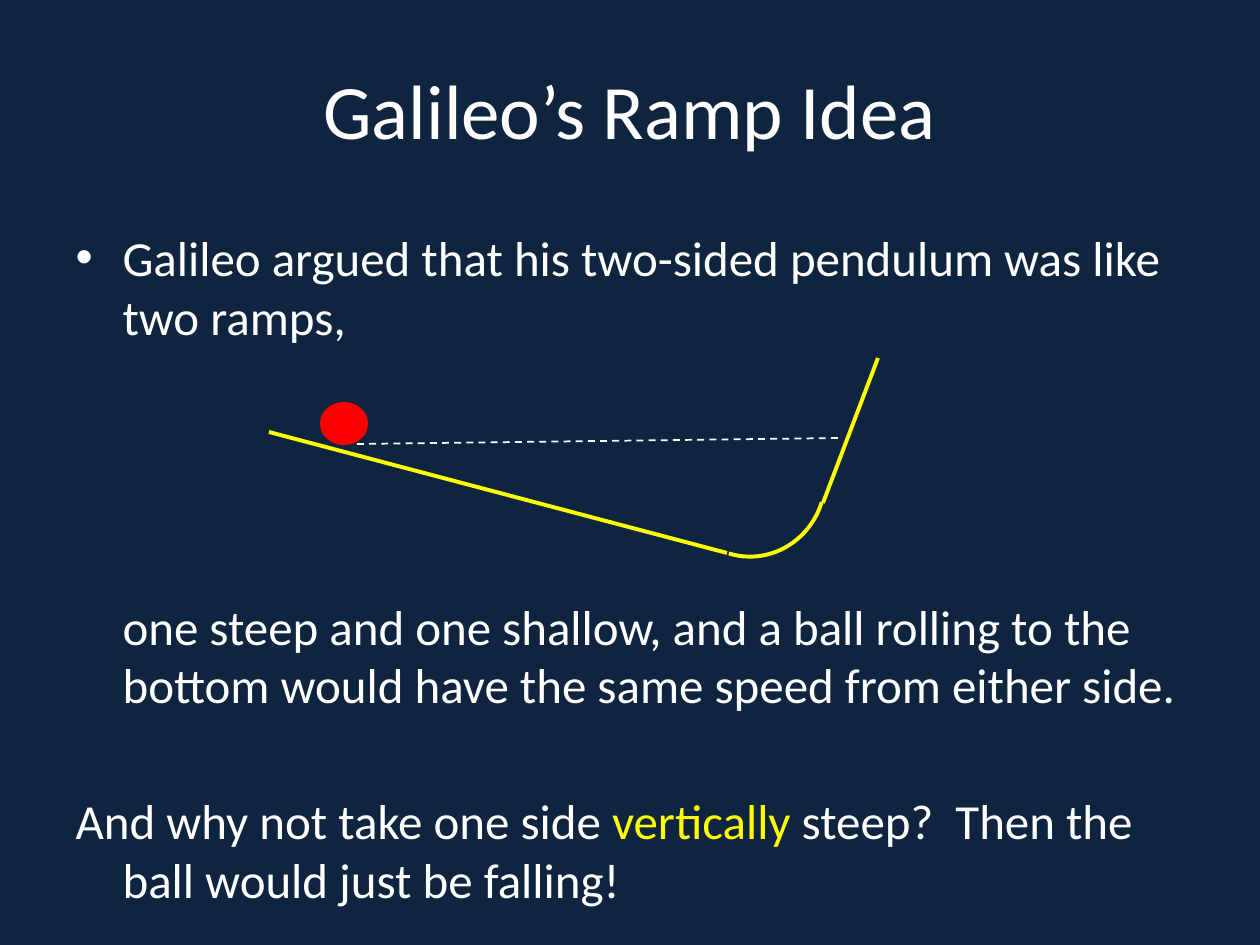
from pptx import Presentation
from pptx.util import Pt
from pptx.dml.color import RGBColor
from pptx.enum import dml, shapes, text
from pptx.oxml.ns import qn
from lxml import etree

# Content
TITLE = "Galileo’s Ramp Idea"
# runs as (words, colour), left margin px, first indent px, bullet, space before pt
BODY = [
    ([("Galileo argued that his two-sided pendulum was like two ramps,", "white")],
     47, -47, True, 0),
    ([("one steep and one shallow, and a ball rolling to the bottom would have "
       "the same speed from either side.", "white")], 47, 0, False, 143.5),
    ([("And why not take one side ", "white"), ("vertically", "yellow"),
      (" steep?  Then the ball would just be falling!", "white")],
     47, -47, False, 44),
]
COLORS = {"navy": "0F243E", "white": "FFFFFF", "yellow": "FFFF00", "red": "FF0000"}
FONT = "Calibri"

# Places in px
TITLE_BOX = (63, 38, 1134, 141)
BODY_BOX = (63, 221, 1134, 693)
BEND, TURN = (675, 407, 153, 147), 107.3
BALL = (320, 402, 48, 43)
# x1, y1, x2, y2, colour, width pt, dashed
LINES = [
    (823, 503, 878, 358, "yellow", 2.25, False),
    (727, 553, 269, 432, "yellow", 2.25, False),
    (357, 444, 842, 438, "white", 1, True),
]


def px(*vals):
    return [round(v * 914400 / 126) for v in vals]


def color(name):
    return RGBColor.from_string(COLORS[name])


def place(shape, box):
    shape.left, shape.top, shape.width, shape.height = px(*box)


def style(font, size):
    font.name, font.size = FONT, Pt(size)
    font.color.rgb = color("white")


def stroke(line, name, width):
    line.color.rgb = color(name)
    line.width = Pt(width)


def main():
    deck = Presentation()
    deck.slide_width, deck.slide_height = px(1260, 945)
    slide = deck.slides.add_slide(deck.slide_layouts[1])
    slide.background.fill.solid()
    slide.background.fill.fore_color.rgb = color("navy")

    # Title
    title = slide.shapes.title
    place(title, TITLE_BOX)
    title.text_frame.text = TITLE
    title.text_frame.vertical_anchor = text.MSO_ANCHOR.MIDDLE
    head = title.text_frame.paragraphs[0]
    head.alignment = text.PP_ALIGN.CENTER
    style(head.font, 44)

    # Body text
    body = slide.placeholders[1]
    place(body, BODY_BOX)
    frame = body.text_frame
    frame.auto_size = text.MSO_AUTO_SIZE.NONE
    for i, (runs, left, indent, bullet, space) in enumerate(BODY):
        para = frame.add_paragraph() if i else frame.paragraphs[0]
        para.space_before = Pt(space)
        style(para.font, 28)
        props = para._p.get_or_add_pPr()
        margin, first = px(left, indent)
        props.set("marL", str(margin))
        props.set("indent", str(first))
        if not bullet:
            props.find(qn("a:defRPr")).addprevious(etree.Element(qn("a:buNone")))
        for words, name in runs:
            run = para.add_run()
            run.text = words
            if name != "white":
                run.font.color.rgb = color(name)

    # Ramp drawing
    ramp = slide.shapes.add_group_shape().shapes
    bend = ramp.add_shape(shapes.MSO_SHAPE.ARC, *px(*BEND))
    bend.rotation = TURN
    bend.shadow.inherit = False
    bend.fill.background()
    stroke(bend.line, "yellow", 2.25)

    ball = ramp.add_shape(shapes.MSO_SHAPE.OVAL, *px(*BALL))
    ball.shadow.inherit = False
    ball.fill.solid()
    ball.fill.fore_color.rgb = color("red")
    ball.line.fill.background()

    for x1, y1, x2, y2, name, width, dashed in LINES:
        link = ramp.add_connector(shapes.MSO_CONNECTOR.STRAIGHT, *px(x1, y1, x2, y2))
        stroke(link.line, name, width)
        if dashed:
            link.line.dash_style = dml.MSO_LINE.DASH
        etree.SubElement(link._element.spPr, qn("a:effectLst"))

    deck.save("out.pptx")


if __name__ == "__main__":
    main()
